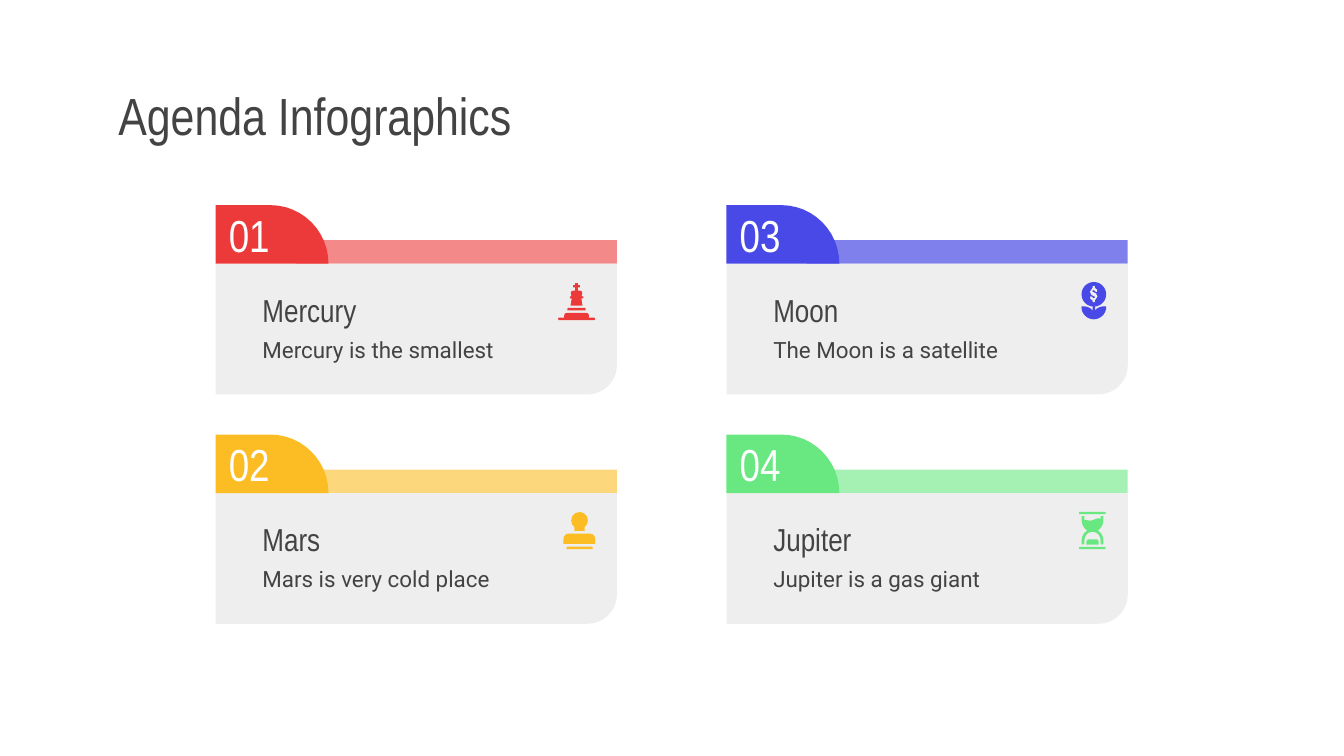
from dataclasses import dataclass
from typing import Optional

from pptx import Presentation, util as u
from pptx.dml.color import RGBColor
from pptx.enum import shapes, text

Pt = u.Pt
DARK, WHITE, PANEL = "434343", "FFFFFF", "EEEEEE"
HEAD_FONT, BODY_FONT = "Arial Narrow", "Roboto"
OVAL, RECT = shapes.MSO_SHAPE.OVAL, shapes.MSO_SHAPE.RECTANGLE
PILL = shapes.MSO_SHAPE.ROUNDED_RECTANGLE
DOME = shapes.MSO_SHAPE.ROUND_2_SAME_RECTANGLE

CARD_LEFT, CARD_TOP, CARD_W = 115.5, 109.9, 215
COL_STEP, ROW_STEP = 273.7, 122.9
TAB_W, TAB_H, BAR_X, BAR_Y = 60.5, 31.4, 43, 18.8
BODY_H = 70


@dataclass
class Preset:
    kind: shapes.MSO_SHAPE
    x: float
    y: float
    w: float
    h: float


@dataclass
class Outline:
    points: list
    color: Optional[str] = None


@dataclass
class Icon:
    x: float
    y: float
    pieces: list


@dataclass
class Card:
    number: str
    name: str
    note: str
    color: str
    tint: str
    icon: Icon


def flatten(segments: list, steps: int = 12) -> list:
    """Turn pairs (lines) and sextuples (cubic curves) into plain points."""
    points = []
    for seg in segments:
        if len(seg) == 2:
            points.append(seg)
            continue
        x0, y0 = points[-1]
        x1, y1, x2, y2, x3, y3 = seg
        for i in range(1, steps + 1):
            t = i / steps
            a, b, c, d = (1 - t) ** 3, 3 * t * (1 - t) ** 2, 3 * t * t * (1 - t), t ** 3
            points.append((a * x0 + b * x1 + c * x2 + d * x3,
                           a * y0 + b * y1 + c * y2 + d * y3))
    return points


def mirrored(half: list, axis: float) -> list:
    """Close a right half, given relative to the axis, with its left half."""
    pts = flatten(half)
    return [(axis + x, y) for x, y in pts] + [(axis - x, y) for x, y in reversed(pts)]


def half_turned(half: list, center: float) -> list:
    """Complete a half outline with the same points turned by 180 degrees."""
    return half + [(2 * center - x, 2 * center - y) for x, y in half]


KING = Icon(183.5, 41.8, [
    Preset(PILL, 0, 18.4, 19.8, 1.4),
    Preset(DOME, 3.3, 16, 13.2, 2.6),
    Preset(DOME, 5, 13.2, 9.8, 1.4),
    Outline(mirrored([(0.7, 0), (0.7, 1.1), (1.8, 1.1), (1.8, 2.3), (0.7, 2.3), (0.7, 4),
                      (1.5, 4), (2.7, 4, 3.3, 4.8, 3, 5.8), (2.7, 7), (3.6, 7.1),
                      (3.6, 8.2), (2.6, 8.2), (3.2, 12)], 9.9)),
])
COIN_PLANT = Icon(190.2, 41.2, [
    Preset(OVAL, 0, 0, 13.2, 13.2),
    Outline(half_turned([(5.9, 2.2), (7.1, 2.2), (7.1, 3.1), (8.4, 4.2), (8.2, 5.3),
                         (7.4, 5.1), (6.6, 4.2), (5.8, 4.6), (5.8, 5.1), (7.8, 6.2),
                         (8.5, 7.8), (7.1, 9.9)], 6.5), PANEL),
    Outline(mirrored([(0.7, 12.8), (0.7, 15.4), (1.5, 13.8, 3.9, 13, 6, 13),
                      (6.6, 13, 6.6, 13, 6.6, 13.6), (6.6, 17, 3.5, 20, 0, 20)], 6.6)),
])
STAMP = Icon(186.4, 41.5, [
    Preset(OVAL, 4.1, 0, 9, 9),
    Preset(RECT, 5.8, 7.5, 5.6, 2.6),
    Preset(DOME, 0, 11.6, 17, 5.4),
    Preset(PILL, 1.5, 18.6, 14.2, 1.3),
])
HOURGLASS = Icon(188.8, 41.5, [
    Preset(DOME, 4, 14.6, 6.6, 2.8),
    Outline([(11.6, 2.2), (11.6, 3.6), (8.5, 3, 8.7, 4.8, 5.5, 4.6), (3, 4.2), (3, 2.2),
             (1.5, 2.2), (1.5, 4.5), (1.5, 7, 3, 9, 4.5, 10), (2.7, 11, 1.5, 13, 1.5, 15.2),
             (1.5, 17.4), (3, 17.4), (3, 15.2), (3, 12.4, 5, 10.7, 7.3, 10.7),
             (9.6, 10.7, 11.6, 12.4, 11.6, 15.2), (11.6, 17.4), (13.1, 17.4), (13.1, 15.2),
             (13.1, 13, 11.9, 11, 10.1, 10), (11.6, 9, 13.1, 7, 13.1, 4.5), (13.1, 2.2)]),
    Preset(PILL, 0, 0, 14.4, 1.2),
    Preset(PILL, 0, 18.7, 14.4, 1.2),
])

CARDS = [
    Card("01", "Mercury", "Mercury is the smallest", "EC3A3B", "F48989", KING),
    Card("02", "Mars", "Mars is very cold place", "FCBD24", "FDD77C", STAMP),
    Card("03", "Moon", "The Moon is a satellite", "4949E7", "8080ED", COIN_PLANT),
    Card("04", "Jupiter", "Jupiter is a gas giant", "69E781", "A5F1B3", HOURGLASS),
]


def rgb(color: str) -> RGBColor:
    return RGBColor.from_string(color)


def paint(sp, color: str):
    sp.shadow.inherit = False
    sp.fill.solid()
    sp.fill.fore_color.rgb = rgb(color)
    sp.line.fill.background()
    return sp


def write(sp, words: str, size: float, font: str, color: str) -> None:
    tf = sp.text_frame
    tf.word_wrap = True
    tf.auto_size = text.MSO_AUTO_SIZE.NONE
    tf.vertical_anchor = text.MSO_ANCHOR.MIDDLE
    tf.margin_left = tf.margin_right = tf.margin_top = tf.margin_bottom = Pt(7.2)
    p = tf.paragraphs[0]
    p.alignment = text.PP_ALIGN.LEFT
    r = p.add_run()
    r.text = words
    r.font.size, r.font.name, r.font.color.rgb = Pt(size), font, rgb(color)


def add_preset(g, piece: Preset, x: float, y: float, color: str) -> None:
    sp = g.add_shape(piece.kind, Pt(x + piece.x), Pt(y + piece.y), Pt(piece.w), Pt(piece.h))
    if piece.kind in (PILL, DOME):
        sp.adjustments[0] = 0.5
    paint(sp, color)


def add_outline(g, segments: list, x: float, y: float, color: str):
    points = [(Pt(x + px), Pt(y + py)) for px, py in flatten(segments)]
    builder = g.build_freeform(*points[0], scale=1.0)
    builder.add_line_segments(points[1:], close=True)
    return paint(builder.convert_to_shape(), color)


def add_label(g, words: str, x: float, y: float, size: float, font: str) -> None:
    write(g.add_textbox(Pt(x), Pt(y), Pt(141), Pt(28.8)), words, size, font, DARK)


def add_card(s, card: Card, x: float, y: float) -> None:
    g = s.shapes.add_group_shape().shapes
    add_preset(g, Preset(RECT, BAR_X, BAR_Y, CARD_W - BAR_X, TAB_H - BAR_Y), x, y, card.tint)
    add_outline(g, [(0, 0), (0, BODY_H), (199, BODY_H),
                    (208, BODY_H, CARD_W, 63, CARD_W, 54), (CARD_W, 0)], x, y + TAB_H, PANEL)
    tab = add_outline(g, [(0, 0), (0, TAB_H), (TAB_W, TAB_H),
                          (TAB_W, 14, 46.5, 0, 29.2, 0)], x, y, card.color)
    write(tab, card.number, 24, HEAD_FONT, WHITE)
    add_label(g, card.note, x + 18, y + 62.8, 12, BODY_FONT)
    add_label(g, card.name, x + 18, y + 41.6, 17, HEAD_FONT)
    icon_x, icon_y = x + card.icon.x, y + card.icon.y
    for piece in card.icon.pieces:
        if isinstance(piece, Preset):
            add_preset(g, piece, icon_x, icon_y, card.color)
        else:
            add_outline(g, piece.points, icon_x, icon_y, piece.color or card.color)


def main() -> None:
    prs = Presentation()
    prs.slide_width, prs.slide_height = Pt(720), Pt(405)
    s = prs.slides.add_slide(prs.slide_layouts[5])
    title = s.shapes.title
    title.left, title.top, title.width, title.height = Pt(56.2), Pt(42.5), Pt(608.4), Pt(38.2)
    write(title, "Agenda Infographics", 28, HEAD_FONT, DARK)
    for i, card in enumerate(CARDS):
        col, row = divmod(i, 2)
        add_card(s, card, CARD_LEFT + col * COL_STEP, CARD_TOP + row * ROW_STEP)
    prs.save("out.pptx")


if __name__ == "__main__":
    main()
